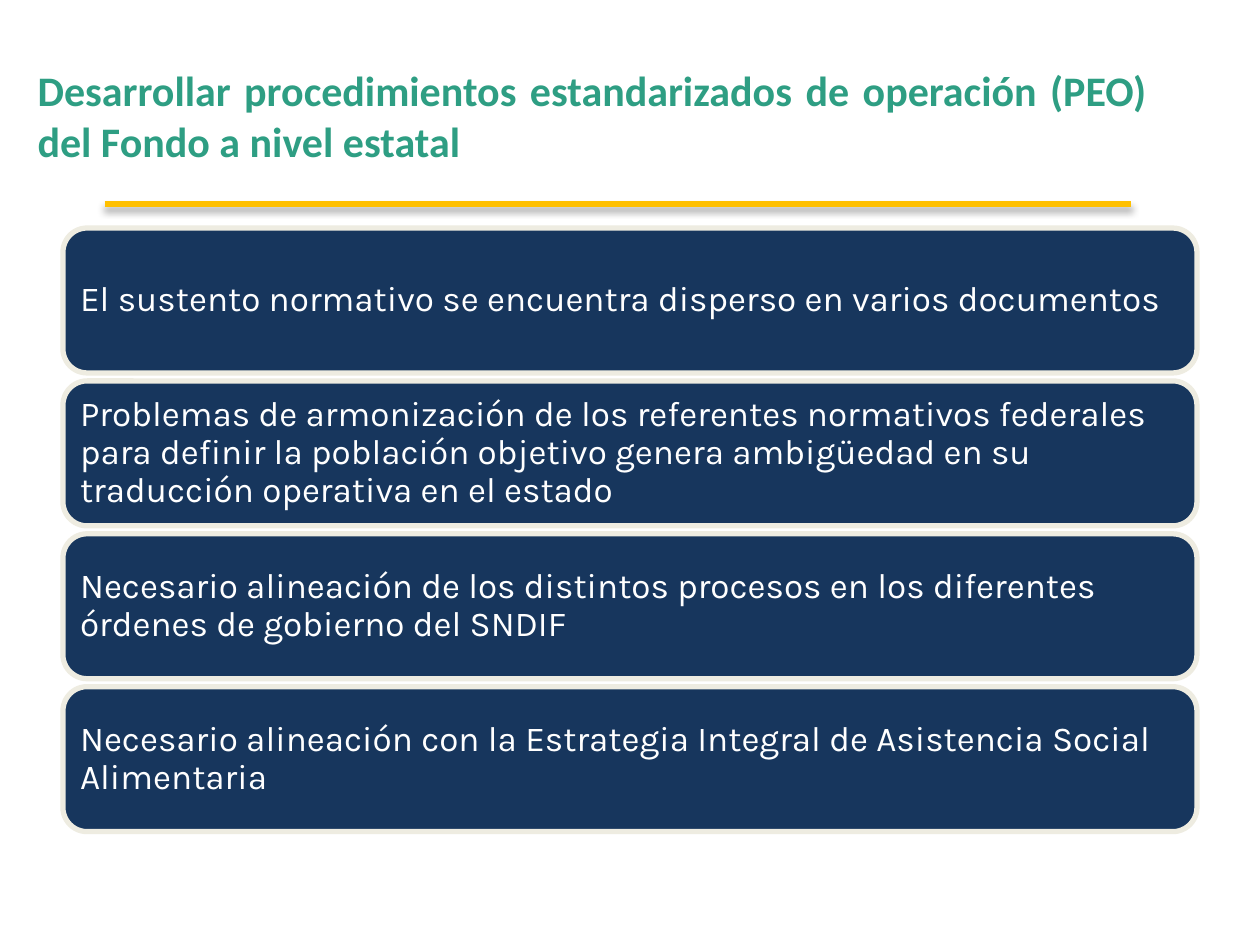
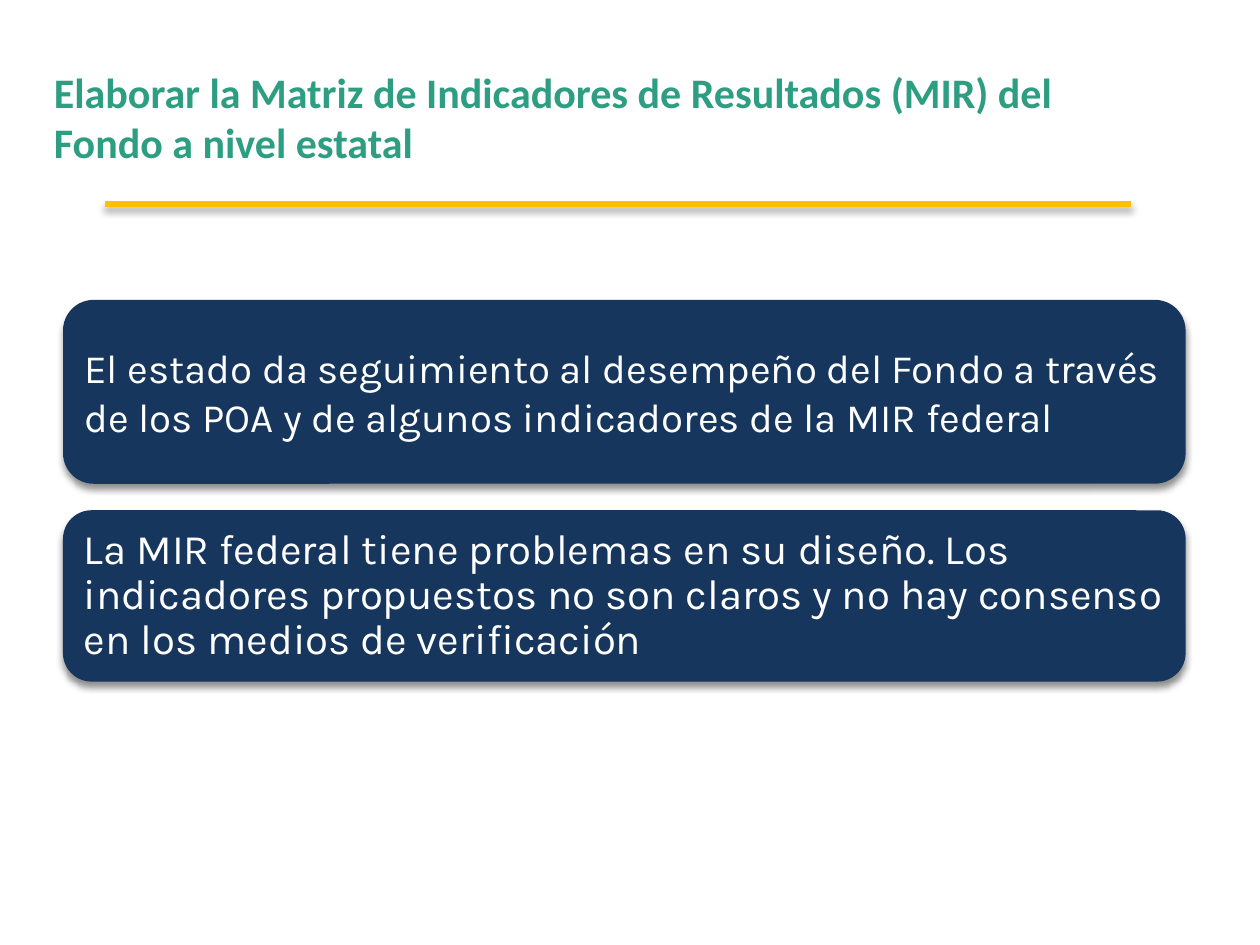
from dataclasses import dataclass

from lxml import etree
from pptx import Presentation
from pptx import util as u
from pptx.dml.color import RGBColor
from pptx.enum import shapes, text
from pptx.oxml.ns import qn


@dataclass(frozen=True)
class Theme:
    title_color: RGBColor = RGBColor(0x2E, 0x9E, 0x83)
    rule_color: RGBColor = RGBColor(0xFF, 0xC0, 0x00)
    panel_color: RGBColor = RGBColor(0x17, 0x36, 0x5D)
    border_color: RGBColor = RGBColor(0xEE, 0xEC, 0xE1)
    panel_text: RGBColor = RGBColor(0xFF, 0xFF, 0xFF)
    title_font: str = "Calibri"
    body_font: str = "Karla"
    title_size: int = 24
    line_width: int = 3


THEME = Theme()

FINDINGS = [
    "El sustento normativo se encuentra disperso en varios documentos",
    "Problemas de armonización de los referentes normativos federales para definir "
    "la población objetivo genera ambigüedad en su traducción operativa en el estado",
    "Necesario alineación de los distintos procesos en los diferentes órdenes de "
    "gobierno del SNDIF",
    "Necesario alineación con la Estrategia Integral de Asistencia Social Alimentaria",
]
MONITORING = (
    "El estado da seguimiento al desempeño del Fondo a través de los POA y de "
    "algunos indicadores de la MIR federal"
)
DESIGN_PROBLEMS = (
    "La MIR federal tiene problemas en su diseño. Los indicadores propuestos no "
    "son claros y no hay consenso en los medios de verificación"
)


def set_effects(shape, shadow):
    """Give the shape a soft shadow straight below it, or no effect at all."""
    properties = shape._element.spPr
    effects = properties.find(qn("a:effectLst"))
    if effects is None:
        effects = etree.SubElement(properties, qn("a:effectLst"))
    if shadow:
        outer = etree.SubElement(
            effects, qn("a:outerShdw"), blurRad=str(u.Pt(4)), dist=str(u.Pt(3)),
            dir=str(90 * 60000), algn="ctr", rotWithShape="0")
        color = etree.SubElement(outer, qn("a:srgbClr"), val="000000")
        etree.SubElement(color, qn("a:alpha"), val="43000")


def write(frame, wording, font_name, size, color, bold=False, align=text.PP_ALIGN.LEFT):
    frame.word_wrap = True
    frame.vertical_anchor = text.MSO_ANCHOR.MIDDLE
    paragraph = frame.paragraphs[0]
    paragraph.text = wording
    paragraph.alignment = align
    font = paragraph.font
    font.name, font.size, font.bold = font_name, u.Pt(size), bold
    font.color.rgb = color
    return paragraph


def add_heading(slide, wording, left, top, width, align=text.PP_ALIGN.LEFT):
    """Title with the golden rule under it."""
    heading = slide.shapes.add_textbox(
        u.Inches(left), u.Inches(top), u.Inches(width), u.Inches(1.25))
    write(heading.text_frame, wording, THEME.title_font, THEME.title_size,
          THEME.title_color, bold=True, align=align)

    rule = slide.shapes.add_connector(
        shapes.MSO_CONNECTOR.STRAIGHT,
        u.Inches(0.83), u.Inches(1.62), u.Inches(8.98), u.Inches(1.62))
    rule.line.color.rgb = THEME.rule_color
    rule.line.width = u.Pt(THEME.line_width)
    set_effects(rule, shadow=True)


def add_panel(slide, wording, top, width, height, size, inset, spacing=0.9, bordered=False):
    """Rounded panel: either bordered or lifted by a shadow."""
    panel = slide.shapes.add_shape(
        shapes.MSO_SHAPE.ROUNDED_RECTANGLE,
        u.Inches(0.5), u.Inches(top), u.Inches(width), u.Inches(height))
    panel.shadow.inherit = False
    panel.fill.solid()
    panel.fill.fore_color.rgb = THEME.panel_color
    if bordered:
        panel.line.color.rgb = THEME.border_color
        panel.line.width = u.Pt(THEME.line_width)
    else:
        panel.line.fill.background()
    set_effects(panel, shadow=not bordered)

    frame = panel.text_frame
    frame.margin_left = frame.margin_right = u.Inches(inset)
    frame.margin_top = frame.margin_bottom = u.Inches(inset)
    paragraph = write(frame, wording, THEME.body_font, size, THEME.panel_text)
    paragraph.line_spacing = spacing


def build_procedures(slide):
    add_heading(
        slide,
        "Desarrollar procedimientos estandarizados de operación (PEO) "
        "del Fondo a nivel estatal",
        0.2, 0.29, 9, align=text.PP_ALIGN.JUSTIFY)

    # Equal panels spread from first_top to last_top
    first_top, last_top = 1.81, 5.45
    pitch = (last_top - first_top) / (len(FINDINGS) - 1)
    for row, finding in enumerate(FINDINGS):
        add_panel(slide, finding, first_top + row * pitch, 9, 1.15,
                  size=20, inset=0.08, bordered=True)


def build_indicators(slide):
    add_heading(
        slide,
        "Elaborar la Matriz de Indicadores de Resultados (MIR) del "
        "Fondo a nivel estatal",
        0.33, 0.3, 8.69)
    add_panel(slide, MONITORING, 2.38, 8.91, 1.46, size=23, inset=0.1, spacing=1.0)
    add_panel(slide, DESIGN_PROBLEMS, 4.05, 8.91, 1.36, size=24, inset=0.1)


def main():
    deck = Presentation()
    deck.slide_width, deck.slide_height = u.Inches(10), u.Inches(7.5)
    blank = deck.slide_layouts[6]
    for build in (build_procedures, build_indicators):
        build(deck.slides.add_slide(blank))
    deck.save("out.pptx")


if __name__ == "__main__":
    main()
